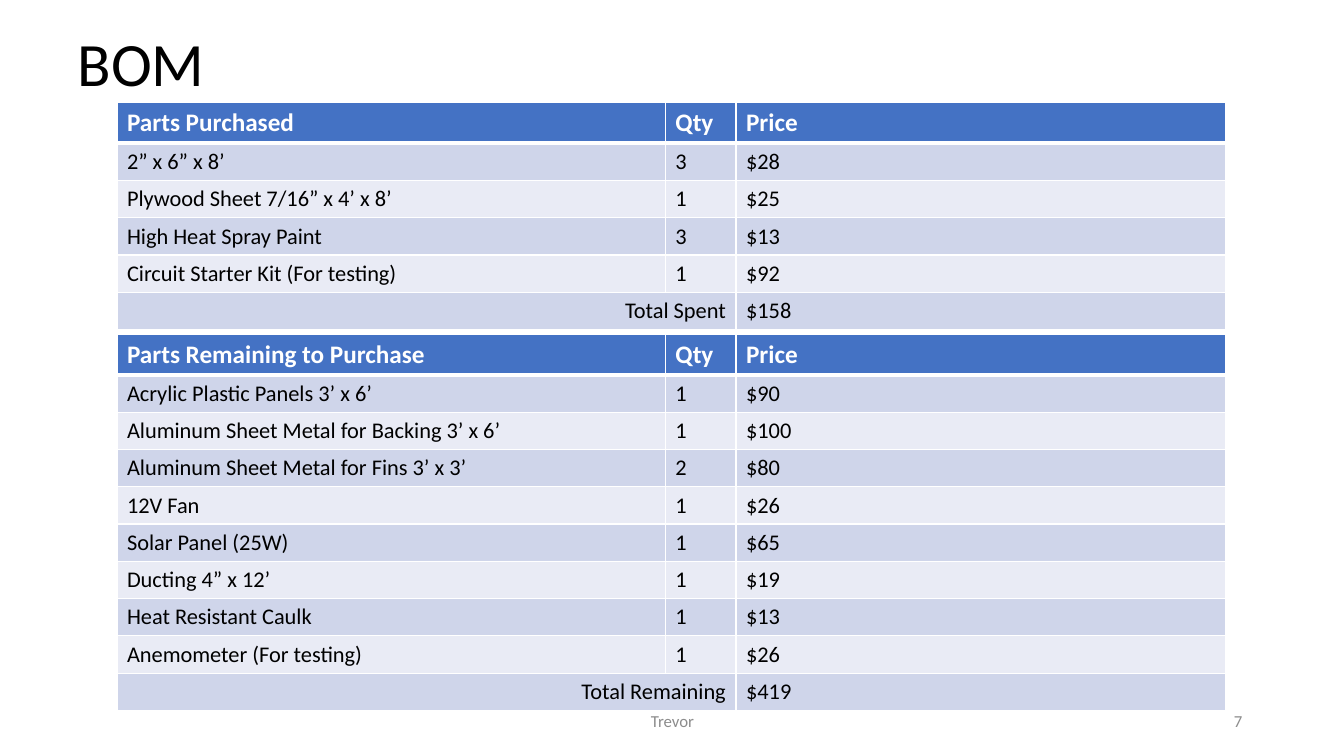
"""Build the BOM slide with its two parts tables."""
from dataclasses import dataclass

from lxml.etree import SubElement as Sub
from pptx import Presentation
from pptx.dml.color import RGBColor
from pptx.enum.text import MSO_ANCHOR as Anchor, PP_ALIGN as Align
from pptx.oxml.ns import qn
from pptx.util import Inches, Pt

FONT = "Calibri"
WHITE, BLACK, GREY = "FFFFFF", "000000", "8C8C8C"
BLUE, BANDS = "4472C4", ("CFD5EA", "E9EBF5")
LEFT, WIDTHS = 1.16, (5.44, 0.7, 4.86)
HEAD_HIGH, ROW_HIGH = 0.4, 0.37


@dataclass
class Parts:
    top: float
    head: str
    rows: list[tuple[str, str, str]]
    total: tuple[str, str]


@dataclass
class Note:
    text: str
    left: float
    width: float
    align: Align


TABLES = [
    Parts(1.02, "Parts Purchased", [
        ("2” x 6” x 8’", "3", "$28"),
        ("Plywood Sheet 7/16” x 4’ x 8’", "1", "$25"),
        ("High Heat Spray Paint", "3", "$13"),
        ("Circuit Starter Kit (For testing)", "1", "$92"),
    ], ("Total Spent", "$158")),
    Parts(3.32, "Parts Remaining to Purchase", [
        ("Acrylic Plastic Panels 3’ x 6’", "1", "$90"),
        ("Aluminum Sheet Metal for Backing 3’ x 6’", "1", "$100"),
        ("Aluminum Sheet Metal for Fins 3’ x 3’", "2", "$80"),
        ("12V Fan", "1", "$26"),
        ("Solar Panel (25W)", "1", "$65"),
        ("Ducting 4” x 12’", "1", "$19"),
        ("Heat Resistant Caulk", "1", "$13"),
        ("Anemometer (For testing)", "1", "$26"),
    ], ("Total Remaining", "$419")),
]
NOTES = [
    Note("Trevor", 4.42, 4.5, Align.CENTER),
    Note("7", 9.42, 3, Align.RIGHT),
]


def paint(part, color: str) -> None:
    part.fill.solid()
    part.fill.fore_color.rgb = RGBColor.from_string(color)


def write(frame, text: str, *, size: float, color: str = BLACK, bold: bool = False,
          align: Align = Align.LEFT, space: float | None = None) -> None:
    line = frame.paragraphs[0]
    line.alignment = align
    line.line_spacing = space
    run = line.add_run()
    run.text = text
    font = run.font
    font.name, font.size, font.bold = FONT, Pt(size), bold
    font.color.rgb = RGBColor.from_string(color)


def edge(cell, base: float) -> None:
    props = cell._tc.get_or_add_tcPr()
    for side, width in (("L", 1), ("R", 1), ("T", 1), ("B", base)):
        line = Sub(props, qn(f"a:ln{side}"), w=str(Pt(width)))
        Sub(Sub(line, qn("a:solidFill")), qn("a:srgbClr"), val=WHITE)


def draw_parts(slide, parts: Parts) -> None:
    rows = [(parts.head, "Qty", "Price"), *parts.rows, (parts.total[0], "", parts.total[1])]
    last = len(rows) - 1
    high = HEAD_HIGH + last * ROW_HIGH
    grid = slide.shapes.add_table(len(rows), len(WIDTHS), Inches(LEFT), Inches(parts.top),
                                  Inches(sum(WIDTHS)), Inches(high)).table
    for col, width in zip(grid.columns, WIDTHS):
        col.width = Inches(width)
    grid.cell(last, 0).merge(grid.cell(last, 1))
    for r, row in enumerate(rows):
        head = r == 0
        grid.rows[r].height = Inches(HEAD_HIGH if head else ROW_HIGH)
        for c, text in enumerate(row):
            cell = grid.cell(r, c)
            edge(cell, 3 if head else 1)
            paint(cell, BLUE if head else BANDS[(r - 1) % 2])
            if cell.is_spanned:
                continue
            write(cell.text_frame, text, size=18 if head else 16, bold=head,
                  color=WHITE if head else BLACK,
                  align=Align.RIGHT if cell.is_merge_origin else Align.LEFT)


def draw_note(slide, note: Note) -> None:
    box = slide.shapes.add_textbox(Inches(note.left), Inches(6.95),
                                   Inches(note.width), Inches(0.4))
    box.text_frame.word_wrap = True
    box.text_frame.vertical_anchor = Anchor.MIDDLE
    write(box.text_frame, note.text, size=12, color=GREY, align=note.align)


def main() -> None:
    deck = Presentation()
    deck.slide_width, deck.slide_height = Inches(13.33), Inches(7.5)
    slide = deck.slides.add_slide(deck.slide_layouts[5])
    paint(slide.background, WHITE)
    title = slide.shapes.title
    title.left, title.top = Inches(0.67), Inches(-0.06)
    title.width, title.height = Inches(11.5), Inches(1.45)
    title.text_frame.vertical_anchor = Anchor.MIDDLE
    write(title.text_frame, "BOM", size=44, space=0.9)
    for note in NOTES:
        draw_note(slide, note)
    for parts in TABLES:
        draw_parts(slide, parts)
    deck.save("out.pptx")


if __name__ == "__main__":
    main()
